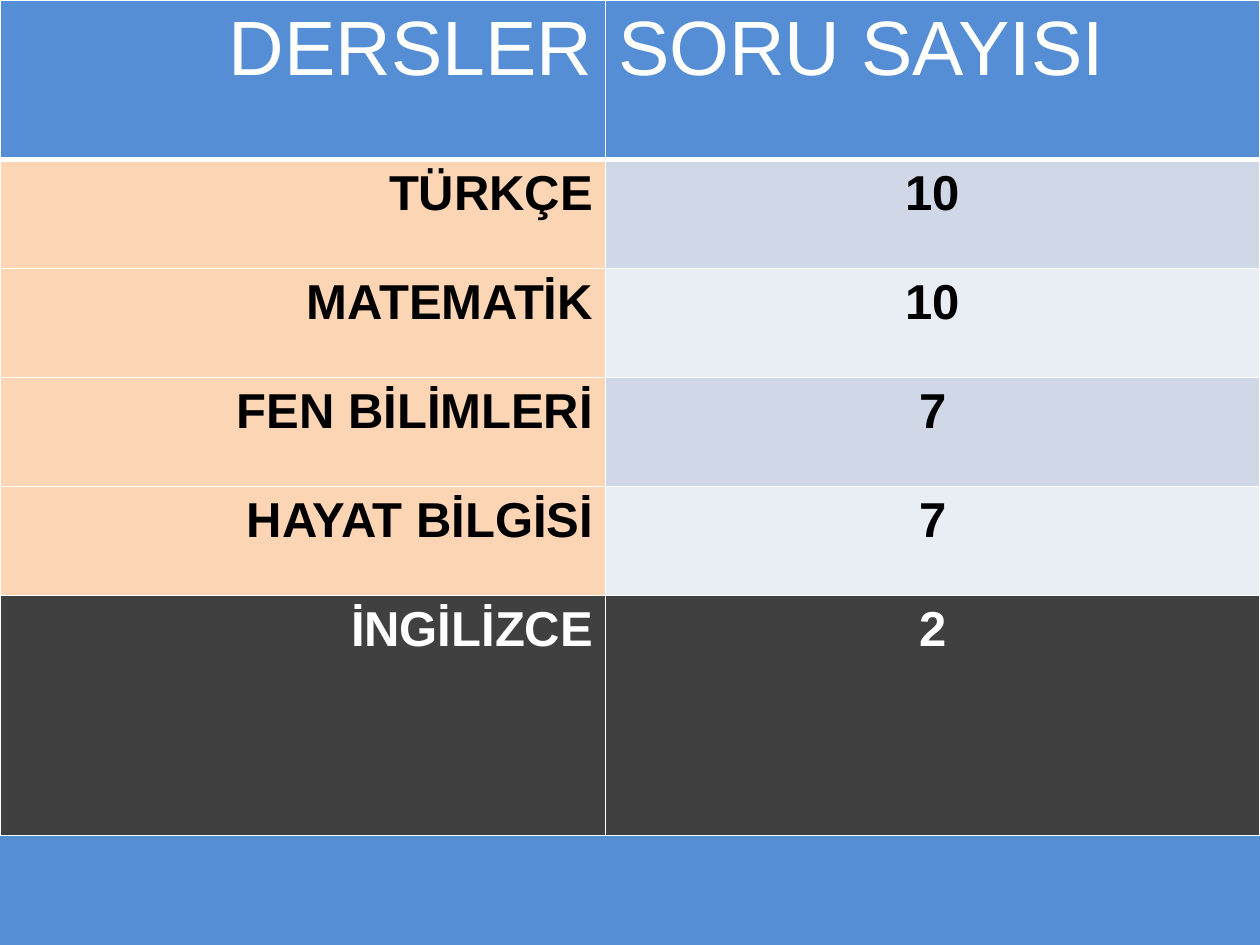
from dataclasses import dataclass

from lxml.etree import fromstring
from pptx import Presentation
from pptx.dml.color import RGBColor
from pptx.enum.text import PP_ALIGN
from pptx.oxml.ns import nsdecls
from pptx.util import Pt


@dataclass(frozen=True)
class Theme:
    font: str = "Arial"
    header_size: int = 44
    body_size: int = 28
    blue: str = "558ED5"
    peach: str = "FCD5B5"
    bands: tuple = ("D0D8E8", "E9EDF4")
    dark: str = "404040"
    white: str = "FFFFFF"
    black: str = "000000"


theme = Theme()


def add_borders(cell, bottom=1):
    """Draw white borders; widths are in points."""
    tcPr = cell._tc.get_or_add_tcPr()
    widths = {"lnL": 1, "lnR": 1, "lnT": 1, "lnB": bottom}
    for i, (side, width) in enumerate(widths.items()):
        tcPr.insert(i, fromstring(
            f'<a:{side} {nsdecls("a")} w="{Pt(width)}"><a:solidFill>'
            f'<a:srgbClr val="{theme.white}"/></a:solidFill></a:{side}>'))


def fill_cell(cell, text, fill, color, size, bold, align):
    cell.fill.solid()
    cell.fill.fore_color.rgb = RGBColor.from_string(fill)
    p = cell.text_frame.paragraphs[0]
    p.alignment = align
    r = p.add_run()
    r.text = text
    r.font.name = theme.font
    r.font.size = Pt(size)
    r.font.bold = bold
    r.font.color.rgb = RGBColor.from_string(color)


prs = Presentation()
prs.slide_width, prs.slide_height = Pt(720), Pt(540)
s = prs.slides.add_slide(prs.slide_layouts[6])
s.background.fill.solid()
s.background.fill.fore_color.rgb = RGBColor.from_string(theme.blue)

rows = [
    ("DERSLER", "SORU SAYISI"),
    ("TÜRKÇE", "10"),
    ("MATEMATİK", "10"),
    ("FEN BİLİMLERİ", "7"),
    ("HAYAT BİLGİSİ", "7"),
    ("İNGİLİZCE", "2"),
]
col_widths = [346, 374]
row_heights = [91.2] + [62.3] * 4 + [137.2]
last = len(rows) - 1

table = s.shapes.add_table(len(rows), len(col_widths), 0, 0,
                           Pt(sum(col_widths)), Pt(sum(row_heights))).table
for column, width in zip(table.columns, col_widths):
    column.width = Pt(width)

for i, (texts, height) in enumerate(zip(rows, row_heights)):
    table.rows[i].height = Pt(height)
    header = i == 0
    if header:
        fills, color = (theme.blue, theme.blue), theme.white
    elif i == last:
        fills, color = (theme.dark, theme.dark), theme.white
    else:
        fills, color = (theme.peach, theme.bands[(i - 1) % 2]), theme.black
    size = theme.header_size if header else theme.body_size
    aligns = (PP_ALIGN.RIGHT, PP_ALIGN.LEFT if header else PP_ALIGN.CENTER)
    for j, text in enumerate(texts):
        cell = table.cell(i, j)
        fill_cell(cell, text, fills[j], color, size, not header, aligns[j])
        add_borders(cell, bottom=3 if header else 1)

prs.save("out.pptx")
